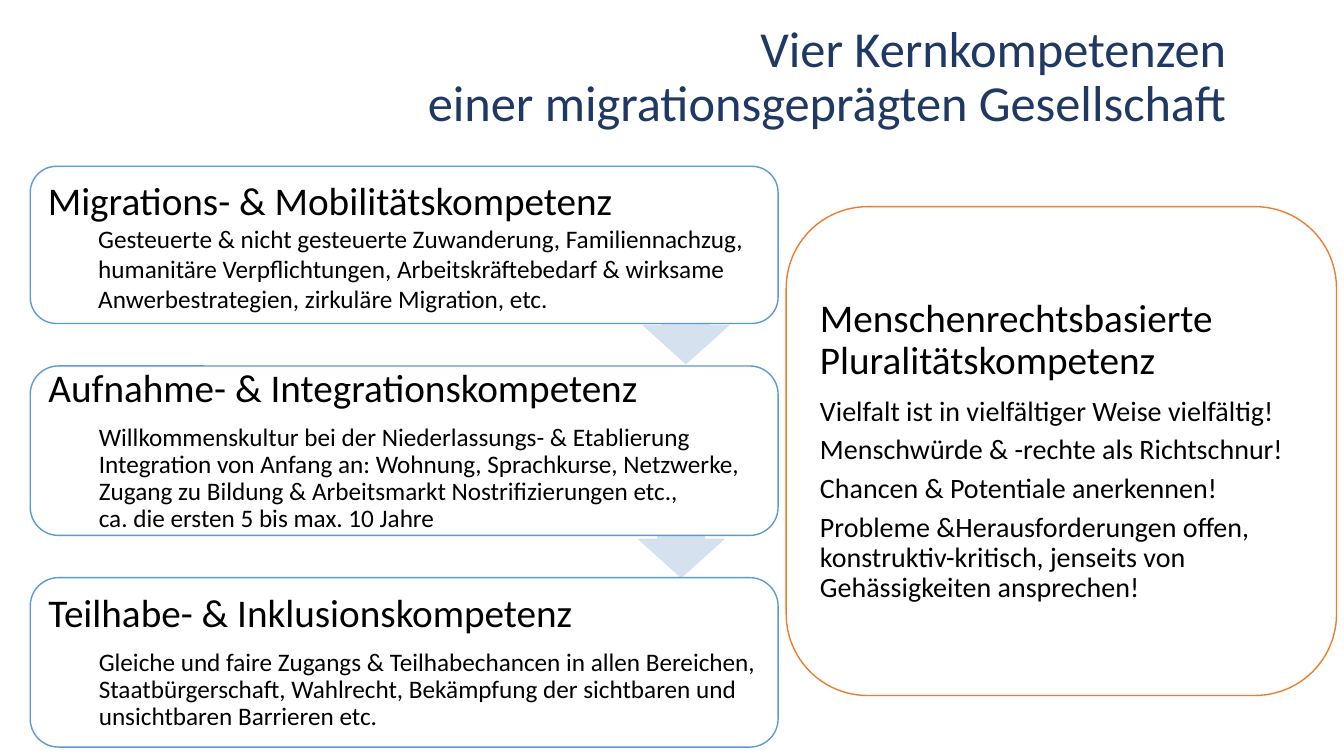
"""Build the slide on the four core competences of a migration society."""
from dataclasses import dataclass

from lxml.etree import SubElement
from pptx import Presentation
from pptx.dml.color import RGBColor
from pptx.enum.shapes import MSO_SHAPE as Preset
from pptx.enum.text import MSO_ANCHOR as Anchor, MSO_AUTO_SIZE as AutoSize, PP_ALIGN as Align
from pptx.oxml.ns import qn
from pptx.util import Pt

FONT = "Calibri"
NAVY = RGBColor(0x20, 0x38, 0x64)
BLACK = RGBColor(0x00, 0x00, 0x00)
WHITE = RGBColor(0xFF, 0xFF, 0xFF)
BLUE = RGBColor(0x5B, 0x9B, 0xD5)
ORANGE = RGBColor(0xED, 0x7D, 0x31)
PALE_BLUE = RGBColor(0xD2, 0xDE, 0xEF)

STAGE_LEFT, STAGE_WIDTH = 21.6, 534.2
ARROW_SIZE = 61.2
HEADING_SIZE = 28
SPACE_RATIO = 0.35


@dataclass(frozen=True)
class Box:
    left: float
    top: float
    width: float
    height: float


@dataclass(frozen=True)
class Card:
    box: Box
    line: RGBColor
    heading: str
    details: tuple[str, ...]
    size: float
    indent: float
    spacing: float
    heading_gap: float
    detail_gap: float


def stage(top: float, height: float, heading: str, detail: str,
          spacing: float = 0.9, gap: float = SPACE_RATIO) -> Card:
    """Describe one of the stacked cards on the left."""
    return Card(Box(STAGE_LEFT, top, STAGE_WIDTH, height), BLUE, heading, (detail,),
                18, 36, spacing, gap * HEADING_SIZE, gap * 18)


CARDS = (
    stage(118.8, 112.3, "Migrations- & Mobilitätskompetenz",
          "Gesteuerte & nicht gesteuerte Zuwanderung, Familiennachzug, humanitäre "
          "Verpflichtungen, Arbeitskräftebedarf & wirksame Anwerbestrategien, "
          "zirkuläre Migration, etc.", spacing=1.0, gap=0),
    Card(Box(561.6, 147.6, 393.1, 349.2), ORANGE, "Menschenrechtsbasierte Pluralitätskompetenz",
         ("Vielfalt ist in vielfältiger Weise vielfältig!",
          "Menschwürde & -rechte als Richtschnur!",
          "Chancen & Potentiale anerkennen!",
          "Probleme &Herausforderungen offen, konstruktiv-kritisch, jenseits von "
          "Gehässigkeiten ansprechen!"),
         20, 0, 0.9, SPACE_RATIO * HEADING_SIZE, 6),
    stage(261.4, 121, "Aufnahme- & Integrationskompetenz",
          "Willkommenskultur bei der Niederlassungs- & Etablierung Integration von Anfang an: "
          "Wohnung, Sprachkurse, Netzwerke, Zugang zu Bildung & Arbeitsmarkt "
          "Nostrifizierungen etc.,\vca. die ersten 5 bis max. 10 Jahre"),
    stage(412.6, 121, "Teilhabe- & Inklusionskompetenz",
          "Gleiche und faire Zugangs & Teilhabechancen in allen Bereichen, Staatbürgerschaft, "
          "Wahlrecht, Bekämpfung der sichtbaren und unsichtbaren Barrieren etc."),
)
ARROWS = (Box(459.4, 198.7, ARROW_SIZE, ARROW_SIZE), Box(456, 351.4, ARROW_SIZE, ARROW_SIZE))


def add_preset(slide, preset: Preset, box: Box, fill: RGBColor, line: RGBColor, weight: float):
    """Add a flat preset shape with the given fill and outline."""
    shape = slide.shapes.add_shape(preset, Pt(box.left), Pt(box.top), Pt(box.width), Pt(box.height))
    shape.shadow.inherit = False
    shape.fill.solid()
    shape.fill.fore_color.rgb = fill
    shape.line.color.rgb = line
    shape.line.width = Pt(weight)
    return shape


def add_arrow(slide, box: Box) -> None:
    """Add a slightly transparent downward arrow."""
    arrow = add_preset(slide, Preset.DOWN_ARROW, box, PALE_BLUE, PALE_BLUE, 0.5)
    arrow.adjustments[0] = 0.55
    arrow.adjustments[1] = 0.45
    for color in arrow._element.spPr.iter(qn("a:srgbClr")):
        SubElement(color, qn("a:alpha"), val="90000")


def format_paragraph(paragraph, text: str, size: float, color: RGBColor, align: Align,
                     spacing: float, gap: float = 0) -> None:
    """Fill a paragraph and set its font, alignment and spacing."""
    paragraph.text = text
    paragraph.alignment = align
    paragraph.line_spacing = spacing
    paragraph.space_before = Pt(0)
    paragraph.space_after = Pt(gap)
    paragraph.font.name = FONT
    paragraph.font.size = Pt(size)
    paragraph.font.color.rgb = color


def add_card(slide, card: Card) -> None:
    """Add a rounded card with a heading and its details."""
    shape = add_preset(slide, Preset.ROUNDED_RECTANGLE, card.box, WHITE, card.line, 1)
    frame = shape.text_frame
    frame.word_wrap = True
    frame.vertical_anchor = Anchor.MIDDLE
    format_paragraph(frame.paragraphs[0], card.heading, HEADING_SIZE, BLACK, Align.LEFT,
                     card.spacing, card.heading_gap)
    for detail in card.details:
        paragraph = frame.add_paragraph()
        format_paragraph(paragraph, detail, card.size, BLACK, Align.LEFT,
                         card.spacing, card.detail_gap)
        if card.indent:
            paragraph.level = 1
            properties = paragraph._p.get_or_add_pPr()
            properties.set("marL", str(Pt(card.indent)))
            properties.set("indent", "0")


def set_title(slide) -> None:
    """Place and format the slide title."""
    title = slide.shapes.title
    title.left, title.top, title.width, title.height = Pt(21.6), Pt(3.6), Pt(870.5), Pt(104.4)
    frame = title.text_frame
    frame.auto_size = AutoSize.NONE
    frame.word_wrap = True
    frame.vertical_anchor = Anchor.MIDDLE
    frame.margin_right = Pt(16)
    format_paragraph(frame.paragraphs[0],
                     "Vier Kernkompetenzen\veiner migrationsgeprägten Gesellschaft",
                     36, NAVY, Align.RIGHT, 0.9)


def main() -> None:
    """Build and save the presentation."""
    presentation = Presentation()
    presentation.slide_width, presentation.slide_height = Pt(960), Pt(540)
    slide = presentation.slides.add_slide(presentation.slide_layouts[5])
    set_title(slide)
    for arrow in ARROWS:
        add_arrow(slide, arrow)
    for card in CARDS:
        add_card(slide, card)
    presentation.save("out.pptx")


if __name__ == "__main__":
    main()
